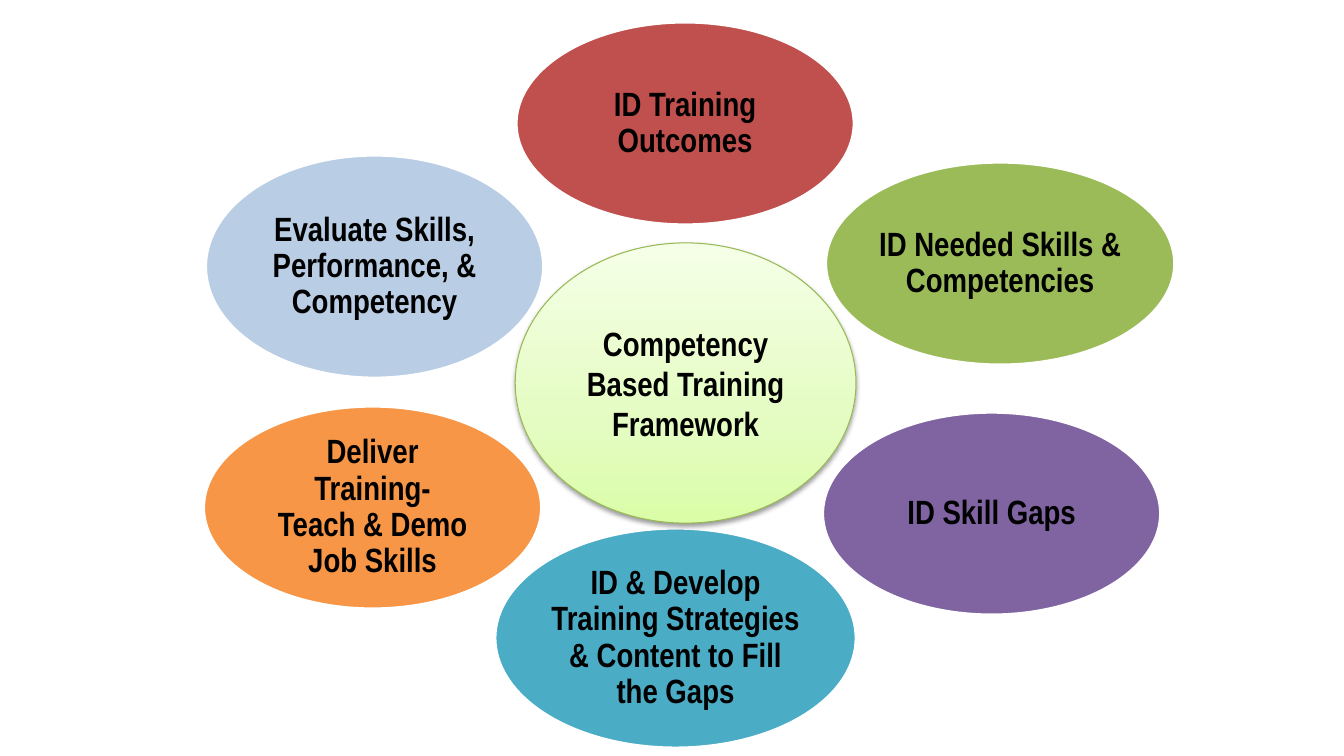
from copy import deepcopy

from lxml.etree import SubElement
from pptx import Presentation
from pptx.dml.color import RGBColor
from pptx.enum.shapes import MSO_SHAPE as Shape
from pptx.enum.text import MSO_ANCHOR as Anchor, PP_ALIGN as Align
from pptx.oxml.ns import qn
from pptx.util import Pt

EMU_PER_PX = 9144
FONT = "Arial Narrow"
COLORS = {
    "text": "000000",
    "white": "FFFFFF",
    "red": "C0504D",
    "green": "9BBB59",
    "purple": "8064A2",
    "teal": "4BACC6",
    "orange": "F79646",
    "blue": "B9CDE5",
    "hub_line": "98B955",
    "hub_bottom": "DAFDA7",
    "hub_middle": "E4FCC2",
    "hub_top": "F5FFE7",
}

# left, top, width, height, color, paragraphs
STEPS = [
    (512, 22, 335, 201, "red", ["ID Training Outcomes"]),
    (819, 161, 346, 201, "green", ["ID Needed Skills & Competencies"]),
    (816, 409, 335, 201, "purple", ["ID Skill Gaps"]),
    (491, 524, 358, 218, "teal",
     ["ID & Develop Training Strategies & Content to Fill the Gaps"]),
    (202, 403, 335, 201, "orange",
     ["Deliver", "Training-", "Teach & Demo Job Skills"]),
    (204, 154, 335, 221, "blue",
     ["Evaluate Skills, Performance, & Competency"]),
]


def px(length):
    return round(length * EMU_PER_PX)


def rgb(name):
    return RGBColor.from_string(COLORS[name])


def add_ellipse(page, left, top, width, height, line_color, line_width):
    ellipse = page.shapes.add_shape(
        Shape.OVAL, px(left), px(top), px(width), px(height))
    ellipse.shadow.inherit = False
    ellipse.line.color.rgb = rgb(line_color)
    ellipse.line.width = Pt(line_width)
    return ellipse


def write_label(ellipse, paragraphs, side_inset, line_spacing):
    frame = ellipse.text_frame
    frame.word_wrap = True
    frame.vertical_anchor = Anchor.MIDDLE
    frame.margin_left = frame.margin_right = px(side_inset)
    frame.margin_top = frame.margin_bottom = px(4)
    frame.text = "\n".join(paragraphs)
    for para in frame.paragraphs:
        para.alignment = Align.CENTER
        para.line_spacing = line_spacing
        for span in para.runs:
            span.font.name = FONT
            span.font.size = Pt(24)
            span.font.bold = True
            span.font.color.rgb = rgb("text")


def add_step(page, left, top, width, height, color, paragraphs):
    ellipse = add_ellipse(page, left, top, width, height, "white", 2)
    ellipse.fill.solid()
    ellipse.fill.fore_color.rgb = rgb(color)
    write_label(ellipse, paragraphs, side_inset=2, line_spacing=0.9)


def fill_gradient(shape, stops):
    """Fill from bottom to top with three (position, color) stops."""
    shape.fill.gradient()
    shape.fill.gradient_angle = 90
    stop_list = shape.element.spPr.find(".//" + qn("a:gsLst"))
    stop_list.insert(1, deepcopy(stop_list[0]))
    for stop, (position, color) in zip(shape.fill.gradient_stops, stops):
        stop.position = position
        stop.color.rgb = rgb(color)


def add_soft_shadow(shape):
    effects = shape.element.spPr.find(qn("a:effectLst"))
    shadow = SubElement(effects, qn("a:outerShdw"), blurRad="40000",
                        dist="20000", dir="5400000", rotWithShape="0")
    color = SubElement(shadow, qn("a:srgbClr"), val=COLORS["text"])
    SubElement(color, qn("a:alpha"), val="38000")


def add_hub(page):
    hub = add_ellipse(page, 511, 241, 338, 278, "hub_line", 0.75)
    fill_gradient(hub, [(0, "hub_bottom"), (0.35, "hub_middle"),
                        (1, "hub_top")])
    add_soft_shadow(hub)
    write_label(hub, ["Competency Based Training", "Framework"],
                side_inset=10, line_spacing=1.0)


def main():
    deck = Presentation()
    deck.slide_width, deck.slide_height = px(1333), px(750)
    page = deck.slides.add_slide(deck.slide_layouts[6])
    for step in STEPS:
        add_step(page, *step)
    add_hub(page)
    deck.save("out.pptx")


if __name__ == "__main__":
    main()
